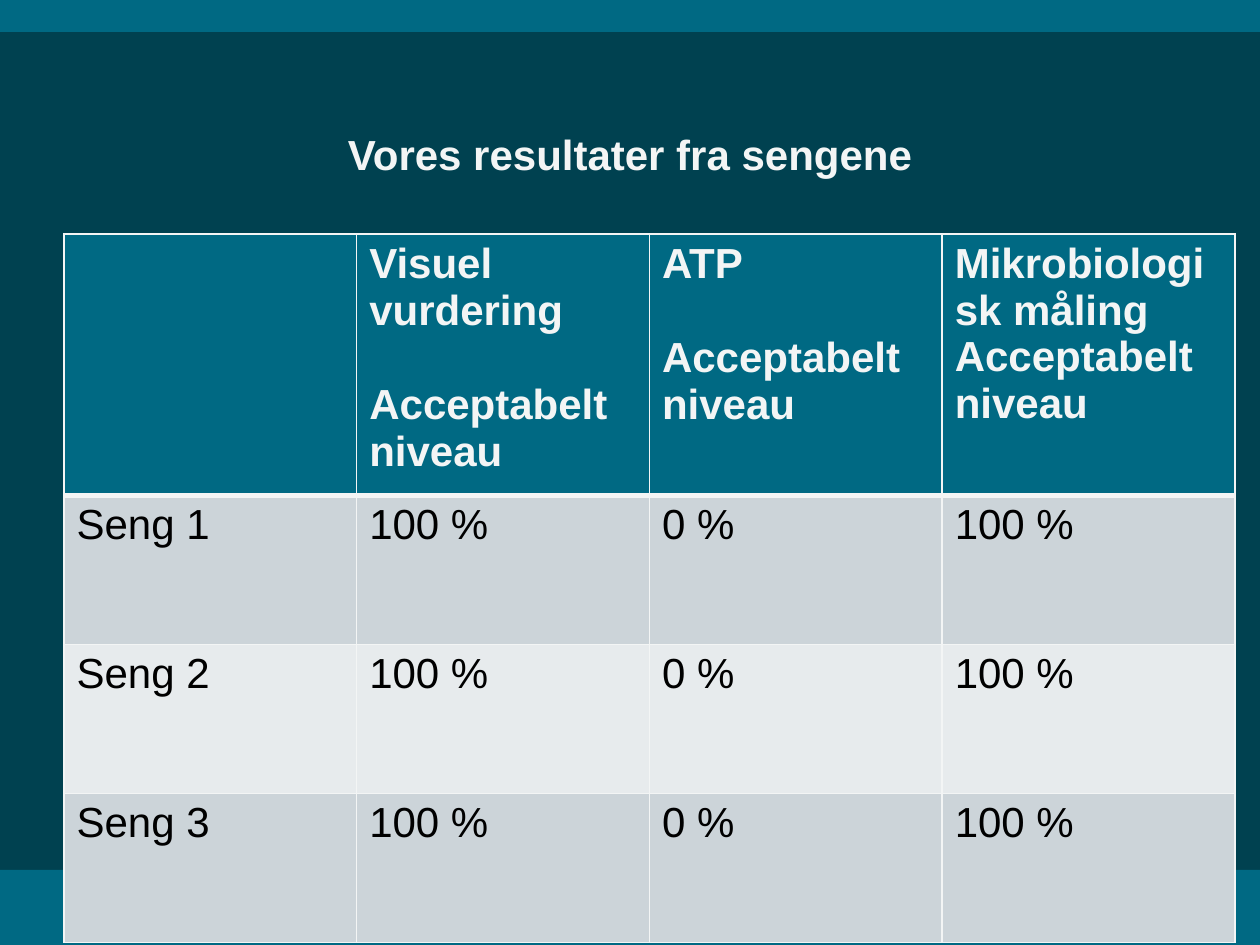
from dataclasses import dataclass

from lxml import etree
from pptx import Presentation
from pptx.dml.color import RGBColor
from pptx.enum import shapes, text
from pptx.oxml import ns
from pptx.util import Pt

SCALE = 914400 / 126
WIDTH, HEIGHT = 1260, 945


@dataclass(frozen=True)
class Theme:
    font: str = "Arial"
    size: int = 24
    paragraph_gap: int = 27
    thin_line: int = 1
    thick_line: int = 3
    background: str = "004150"
    accent: str = "006983"
    light: str = "F3F5F5"
    dark: str = "000000"
    bands: tuple = ("CCD4D9", "E7EBED")


THEME = Theme()

HEADERS = [
    [],
    ["Visuel vurdering", "Acceptabelt niveau"],
    ["ATP", "Acceptabelt niveau"],
    ["Mikrobiologisk måling", "Acceptabelt niveau"],
]
SPACED_COLUMNS = (1, 2)
RESULTS = ["100 %", "0 %", "100 %"]
BEDS = [[f"Seng {number}", *RESULTS] for number in (1, 2, 3)]


def px(value):
    return round(value * SCALE)


def box_at(*lengths):
    return [px(length) for length in lengths]


def add_band(page, top, height, color):
    band = page.shapes.add_shape(
        shapes.MSO_SHAPE.RECTANGLE, *box_at(0, top, WIDTH, height))
    band.shadow.inherit = False
    band.fill.solid()
    band.fill.fore_color.rgb = RGBColor.from_string(color)
    band.line.fill.background()


def add_span(para, wording, color, bold=False):
    span = para.add_run()
    span.text = wording
    span.font.name = THEME.font
    span.font.size = Pt(THEME.size)
    span.font.bold = bold
    span.font.color.rgb = RGBColor.from_string(color)


def add_title(page, wording):
    box = page.shapes.add_textbox(*box_at(67, 33, 1126, 146))
    frame = box.text_frame
    frame.word_wrap = True
    frame.vertical_anchor = text.MSO_ANCHOR.BOTTOM
    frame.margin_left = frame.margin_right = 0
    frame.margin_top = frame.margin_bottom = 0
    para = frame.paragraphs[0]
    para.alignment = text.PP_ALIGN.CENTER
    add_span(para, wording, THEME.light, bold=True)


def add_borders(cell, top, bottom):
    properties = cell._tc.get_or_add_tcPr()
    thin = THEME.thin_line
    for side, width in (("L", thin), ("R", thin), ("T", top), ("B", bottom)):
        line = etree.SubElement(
            properties, ns.qn(f"a:ln{side}"), w=str(Pt(width)))
        fill = etree.SubElement(line, ns.qn("a:solidFill"))
        etree.SubElement(fill, ns.qn("a:srgbClr"), val=THEME.light)


def fill_cell(cell, lines, color, fill, bold=False, gap=0):
    cell.fill.solid()
    cell.fill.fore_color.rgb = RGBColor.from_string(fill)
    frame = cell.text_frame
    for index, wording in enumerate(lines):
        para = frame.add_paragraph() if index else frame.paragraphs[0]
        if index and gap:
            para.space_before = Pt(gap)
        add_span(para, wording, color, bold)


def add_results_table(page):
    row_heights = [246, 149, 149, 149]
    column_count = len(HEADERS)
    table = page.shapes.add_table(
        len(row_heights), column_count,
        *box_at(64, 234, 1171, sum(row_heights))).table
    for column in table.columns:
        column.width = px(1171 / column_count)
    for row, height in zip(table.rows, row_heights):
        row.height = px(height)

    for column, lines in enumerate(HEADERS):
        cell = table.cell(0, column)
        add_borders(cell, THEME.thin_line, THEME.thick_line)
        gap = THEME.paragraph_gap if column in SPACED_COLUMNS else 0
        fill_cell(cell, lines, THEME.light, THEME.accent, True, gap)

    for row, values in enumerate(BEDS, start=1):
        top = THEME.thick_line if row == 1 else THEME.thin_line
        fill = THEME.bands[(row - 1) % len(THEME.bands)]
        for column, value in enumerate(values):
            cell = table.cell(row, column)
            add_borders(cell, top, THEME.thin_line)
            fill_cell(cell, [value], THEME.dark, fill)


def main():
    deck = Presentation()
    deck.slide_width, deck.slide_height = px(WIDTH), px(HEIGHT)
    page = deck.slides.add_slide(deck.slide_layouts[6])
    add_band(page, 0, HEIGHT, THEME.background)
    add_band(page, 0, 32, THEME.accent)
    add_band(page, 870, 75, THEME.accent)
    add_title(page, "Vores resultater fra sengene")
    add_results_table(page)
    deck.save("out.pptx")


if __name__ == "__main__":
    main()
